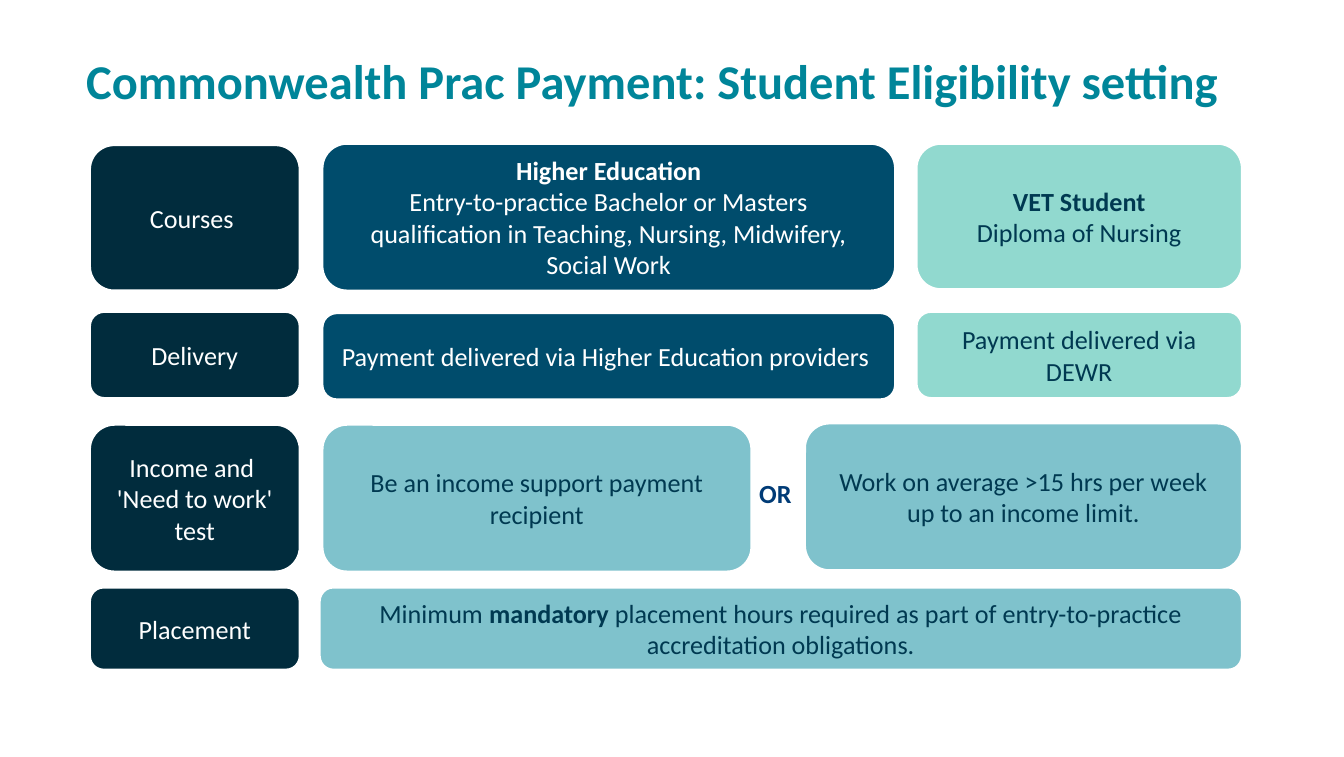
from dataclasses import dataclass

import pptx
import pptx.slide
from pptx.dml.color import RGBColor
from pptx.enum.shapes import MSO_SHAPE
from pptx.enum.text import MSO_ANCHOR, PP_ALIGN
from pptx.util import Inches, Pt

WHITE = RGBColor(0xFF, 0xFF, 0xFF)
INK = RGBColor(0x01, 0x2C, 0x3D)
NAVY = RGBColor(0x00, 0x4C, 0x6C)
MINT = RGBColor(0x91, 0xD9, 0xCF)
SKY = RGBColor(0x7F, 0xC2, 0xCC)
DARK_TEXT = RGBColor(0x00, 0x39, 0x51)
OR_BLUE = RGBColor(0x00, 0x3B, 0x76)
TITLE_TEAL = RGBColor(0x00, 0x85, 0x99)

LABEL_LEFT, LABEL_WIDTH = 0.67, 1.56
MAIN_LEFT, MAIN_WIDTH = 2.4, 4.26
VET_LEFT, VET_WIDTH = 6.82, 2.42


@dataclass(frozen=True)
class Card:
    left: float
    top: float
    width: float
    height: float
    fill: RGBColor
    color: RGBColor
    paragraphs: tuple[str, ...]  # **...** marks bold text
    margin: float = 0.1


def write(frame, paragraphs: tuple[str, ...], size: float, color: RGBColor,
          align: PP_ALIGN = PP_ALIGN.CENTER) -> None:
    """Fill a text frame, setting the parts between ** in bold."""
    frame.word_wrap = True
    for index, text in enumerate(paragraphs):
        paragraph = frame.add_paragraph() if index else frame.paragraphs[0]
        paragraph.alignment = align
        paragraph.font.name = "Calibri"
        paragraph.font.size = Pt(size)
        paragraph.font.color.rgb = color
        for position, part in enumerate(text.split("**")):
            if part:
                run = paragraph.add_run()
                run.text = part
                run.font.bold = position % 2 == 1


def add_box(slide: pptx.slide.Slide, kind: MSO_SHAPE, card: Card, line_width: float):
    shape = slide.shapes.add_shape(kind, Inches(card.left), Inches(card.top),
                                   Inches(card.width), Inches(card.height))
    shape.shadow.inherit = False
    shape.fill.solid()
    shape.fill.fore_color.rgb = card.fill
    shape.line.color.rgb = WHITE
    shape.line.width = Pt(line_width)
    return shape


def add_card(slide: pptx.slide.Slide, card: Card) -> None:
    frame = add_box(slide, MSO_SHAPE.ROUNDED_RECTANGLE, card, 1).text_frame
    frame.vertical_anchor = MSO_ANCHOR.MIDDLE
    frame.margin_left = frame.margin_right = Inches(card.margin)
    write(frame, card.paragraphs, 14, card.color)


def label(top: float, height: float, *paragraphs: str) -> Card:
    return Card(LABEL_LEFT, top, LABEL_WIDTH, height, INK, WHITE, paragraphs, 0.05)


CARDS = [
    # Courses
    label(1.08, 1.08, "Courses "),
    Card(MAIN_LEFT, 1.07, MAIN_WIDTH, 1.09, NAVY, WHITE, (
        "**Higher Education**",
        "Entry-to-practice Bachelor or Masters qualification in Teaching, "
        "Nursing, Midwifery, Social Work")),
    Card(VET_LEFT, 1.07, VET_WIDTH, 1.08, MINT, DARK_TEXT,
         ("**VET Student**", "Diploma of Nursing")),
    # Delivery
    label(2.32, 0.64, "Delivery"),
    Card(MAIN_LEFT, 2.33, MAIN_WIDTH, 0.64, NAVY, WHITE,
         ("Payment delivered via Higher Education providers ",)),
    Card(VET_LEFT, 2.32, VET_WIDTH, 0.64, MINT, DARK_TEXT,
         ("Payment delivered via DEWR",)),
    # Income and work test
    label(3.16, 1.09, "Income and ", "'Need to work' test"),
    Card(MAIN_LEFT, 3.16, 3.19, 1.09, SKY, DARK_TEXT,
         ("Be an income support payment recipient",)),
    Card(5.99, 3.15, 3.25, 1.09, SKY, DARK_TEXT,
         ("Work on average >15 hrs per week up to an income limit.",)),
    # Placement
    label(4.37, 0.61, "Placement"),
    Card(2.38, 4.37, 6.86, 0.61, SKY, DARK_TEXT,
         ("Minimum **mandatory** placement hours required as part of "
          "entry-to-practice accreditation obligations.",)),
]
OR_CARD = Card(5.55, 3.5, 0.48, 0.34, WHITE, OR_BLUE, ("**OR**",))


def main() -> None:
    presentation = pptx.Presentation()
    presentation.slide_width = Inches(10)
    presentation.slide_height = Inches(5.63)
    slide = presentation.slides.add_slide(presentation.slide_layouts[6])

    # Title
    title = slide.shapes.add_textbox(Inches(0.37), Inches(0.33), Inches(9.06), Inches(0.54))
    write(title.text_frame, ("**Commonwealth Prac Payment: Student Eligibility setting **",),
          26, TITLE_TEAL)

    # "OR" sits behind the two cards it separates
    or_frame = add_box(slide, MSO_SHAPE.RECTANGLE, OR_CARD, 0.75).text_frame
    or_frame.vertical_anchor = MSO_ANCHOR.TOP
    write(or_frame, OR_CARD.paragraphs, 14, OR_CARD.color, PP_ALIGN.LEFT)

    # Eligibility grid
    for card in CARDS:
        add_card(slide, card)

    presentation.save("out.pptx")


if __name__ == "__main__":
    main()
